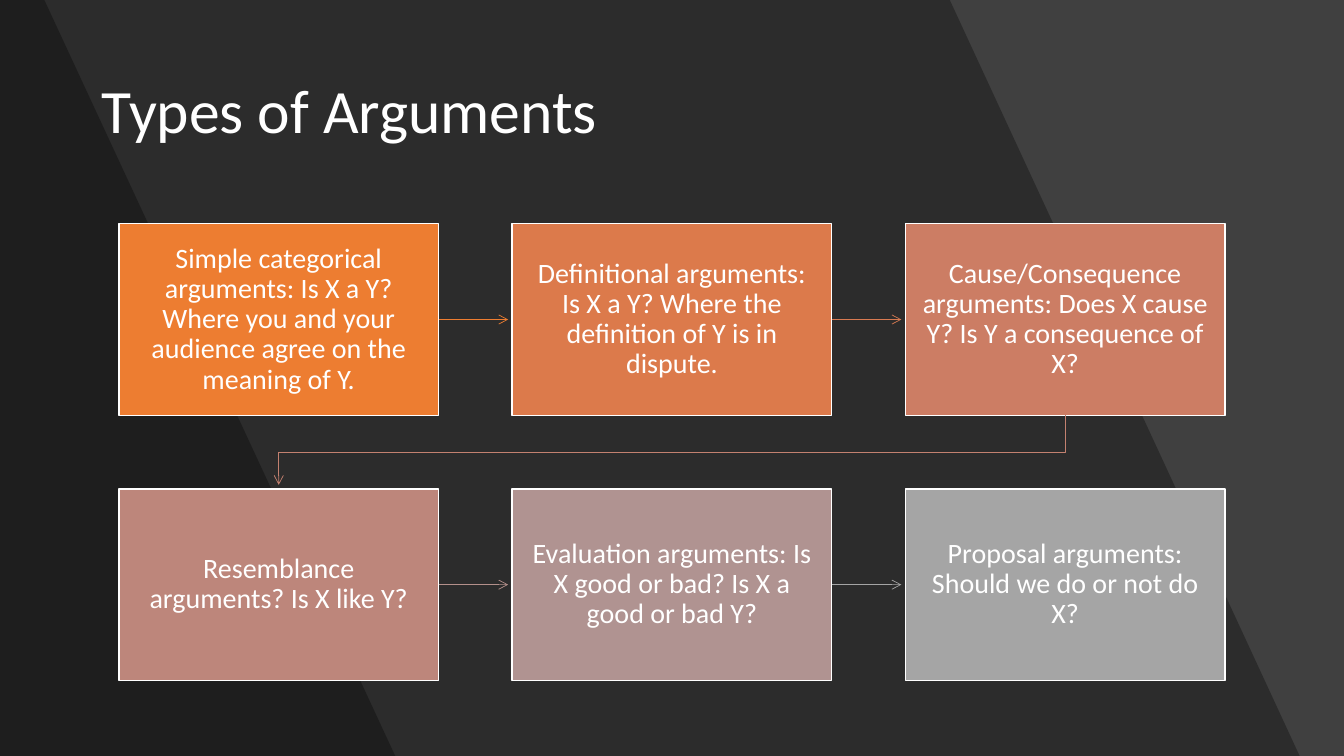
from lxml import etree
from pptx import Presentation
from pptx.dml.color import RGBColor
from pptx.enum.shapes import MSO_CONNECTOR, MSO_SHAPE
from pptx.enum.text import MSO_ANCHOR, PP_ALIGN
from pptx.oxml.ns import qn
from pptx.util import Inches, Pt

RECTANGLE = MSO_SHAPE.RECTANGLE
STRAIGHT = MSO_CONNECTOR.STRAIGHT
MIDDLE = MSO_ANCHOR.MIDDLE
LEFT, CENTER = PP_ALIGN.LEFT, PP_ALIGN.CENTER
WHITE = "FFFFFF"
COLUMNS = 3
BOX_WIDTH, BOX_HEIGHT = 3.17, 1.9
COLUMN_STEP, ROW_STEP = 3.9, 2.63
ARROW_GAP = 0.04

ARGUMENTS = [
    ("Simple categorical arguments: Is X a Y? Where you and your audience agree "
     "on the meaning of Y.", "ED7D31", "ED7D31"),
    ("Definitional arguments: Is X a Y? Where the definition of Y is in dispute.",
     "DC7A4B", "D87A51"),
    ("Cause/Consequence arguments: Does X cause Y? Is Y a consequence of X?",
     "CC7D64", "C48170"),
    ("Resemblance arguments? Is X like Y?", "BD867B", "B4908B"),
    ("Evaluation arguments: Is X good or bad? Is X a good or bad Y?",
     "B09391", "A5A5A5"),
    ("Proposal arguments: Should we do or not do X?", "A5A5A5", None),
]


def color(value):
    return RGBColor.from_string(value)


def write(shape, text, size, align=LEFT, inset=None, after=0):
    frame = shape.text_frame
    frame.word_wrap = True
    frame.vertical_anchor = MIDDLE
    if inset is not None:
        frame.margin_left = frame.margin_right = Inches(inset)
        frame.margin_top = frame.margin_bottom = Inches(inset)
    para = frame.paragraphs[0]
    para.alignment = align
    para.line_spacing = 0.9
    para.space_after = Pt(after)
    span = para.add_run()
    span.text = text
    span.font.name = "Calibri"
    span.font.size = Pt(size)
    span.font.color.rgb = color(WHITE)


def outline(page, points, close):
    corners = [(Inches(x), Inches(y)) for x, y in points]
    builder = page.shapes.build_freeform(*corners[0], scale=1.0)
    builder.add_line_segments(corners[1:], close=close)
    shape = builder.convert_to_shape()
    shape.shadow.inherit = False
    return shape


def add_background(page, height):
    page.background.fill.solid()
    page.background.fill.fore_color.rgb = color("404040")
    for top_right, bottom_right in [(9.42, 12.89), (0.44, 3.92)]:
        band = outline(page, [(0, 0), (top_right, 0), (bottom_right, height), (0, height)], True)
        band.fill.solid()
        band.fill.fore_color.rgb = color("000000")
        band.line.fill.background()
        tint = band.element.spPr.find(qn("a:solidFill"))[0]
        etree.SubElement(tint, qn("a:alpha"), val="30000")
        page.shapes.title.element.addprevious(band.element)


def add_title(page, left, top, width, height):
    title = page.shapes.title
    title.left, title.top = Inches(left), Inches(top)
    title.width, title.height = Inches(width), Inches(height)
    write(title, "Types of Arguments", 44)


def add_arrow(page, points, line_color):
    if len(points) == 2:
        ends = [Inches(value) for point in points for value in point]
        arrow = page.shapes.add_connector(STRAIGHT, *ends)
        etree.SubElement(arrow.element.spPr, qn("a:effectLst"))
    else:
        arrow = outline(page, points, False)
        arrow.fill.background()
    arrow.line.color.rgb = color(line_color)
    arrow.line.width = Pt(0.5)
    etree.SubElement(arrow.element.spPr.find(qn("a:ln")), qn("a:tailEnd"), type="arrow")


def add_box(page, left, top, text, fill):
    box = page.shapes.add_shape(
        RECTANGLE, Inches(left), Inches(top), Inches(BOX_WIDTH), Inches(BOX_HEIGHT))
    box.shadow.inherit = False
    box.fill.solid()
    box.fill.fore_color.rgb = color(fill)
    box.line.color.rgb = color(WHITE)
    box.line.width = Pt(1)
    write(box, text, 20, align=CENTER, inset=0.16, after=7)


def add_flow(page, left, top):
    for index, (text, fill, arrow_color) in enumerate(ARGUMENTS):
        row, column = divmod(index, COLUMNS)
        x, y = left + column * COLUMN_STEP, top + row * ROW_STEP
        add_box(page, x, y, text, fill)
        if arrow_color is None:
            continue
        if column < COLUMNS - 1:
            middle = y + BOX_HEIGHT / 2
            points = [(x + BOX_WIDTH, middle), (x + COLUMN_STEP - ARROW_GAP, middle)]
        else:
            start, end = x + BOX_WIDTH / 2, left + BOX_WIDTH / 2
            bottom, next_top = y + BOX_HEIGHT, y + ROW_STEP
            turn = (bottom + next_top) / 2
            points = [(start, bottom), (start, turn), (end, turn), (end, next_top - ARROW_GAP)]
        add_arrow(page, points, arrow_color)


def main():
    deck = Presentation()
    deck.slide_width, deck.slide_height = Inches(13.33), Inches(7.5)
    page = deck.slides.add_slide(deck.slide_layouts.get_by_name("Title Only"))
    add_background(page, 7.5)
    add_title(page, 0.91, 0.4, 11.51, 1.45)
    add_flow(page, 1.18, 2.22)
    deck.save("out.pptx")


if __name__ == "__main__":
    main()
